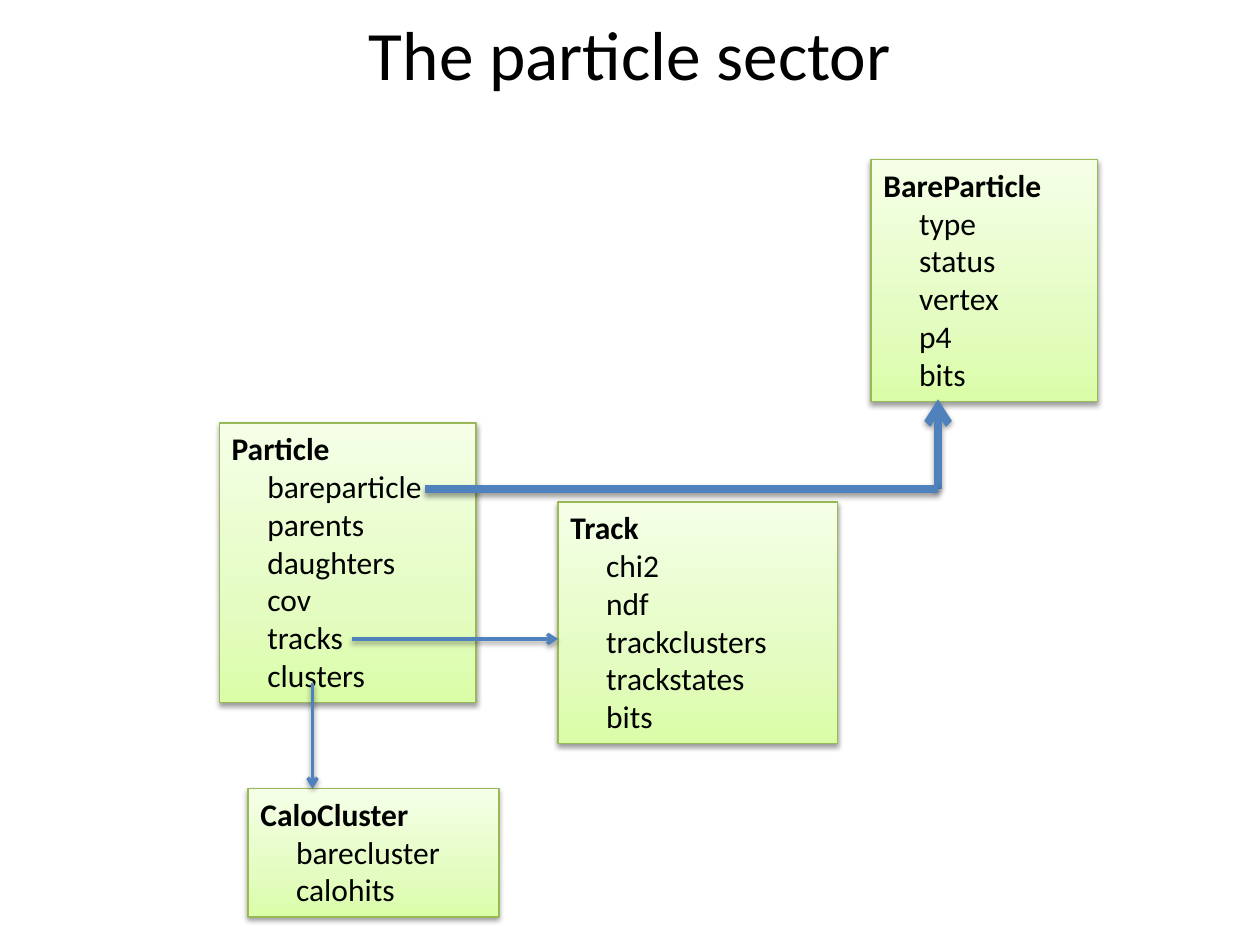
from lxml.etree import SubElement
from pptx import Presentation
from pptx.dml.color import RGBColor
from pptx.enum.shapes import MSO_CONNECTOR, MSO_SHAPE
from pptx.enum.text import MSO_ANCHOR, MSO_AUTO_SIZE, PP_ALIGN
from pptx.oxml.ns import qn
from pptx.util import Cm, Pt

TITLE = "The particle sector"
CLASSES = [
    ("Track", ["chi2", "ndf", "trackclusters", "trackstates", "bits"], (11.25, 10.12, 5.64)),
    ("CaloCluster", ["barecluster", "calohits"], (5, 15.9, 5.06)),
    ("Particle", ["bareparticle", "parents", "daughters", "cov", "tracks", "clusters"],
     (4.42, 8.53, 5.18)),
    ("BareParticle", ["type", "status", "vertex", "p4", "bits"], (17.56, 3.22, 4.57)),
]
LINKS = [
    ((6.3, 15.9), (6.3, 13.77), 2, True),
    ((11.25, 12.88), (7.09, 12.88), 2, True),
    ((18.91, 8.05), (18.91, 9.86), 4.5, True),
    ((18.91, 9.86), (8.56, 9.86), 4.5, False),
]

FONT = "Calibri"
BLACK = RGBColor(0, 0, 0)
BLUE = RGBColor(0x4F, 0x81, 0xBD)
GREEN = RGBColor(0x98, 0xB9, 0x55)
GRADIENT = [
    (0, RGBColor(0xDA, 0xFD, 0xA7)),
    (35, RGBColor(0xE4, 0xFC, 0xC2)),
    (100, RGBColor(0xF5, 0xFF, 0xE7)),
]
LINE_HEIGHT = 0.762
PADDING = 0.3
INDENT = 0.72


def add_node(parent, tag, **attrs):
    return SubElement(parent, qn(tag), {k: str(v) for k, v in attrs.items()})


def add_shadow(shape):
    effects = add_node(shape.element.spPr, "a:effectLst")
    shadow = add_node(effects, "a:outerShdw", blurRad=Pt(3.1), dist=Pt(1.6),
                      dir=5400000, rotWithShape=0)
    color = add_node(shadow, "a:srgbClr", val=BLACK)
    add_node(color, "a:alpha", val=38000)


def set_gradient(shape):
    shape.fill.gradient()
    shape.fill.gradient_angle = 90
    stops = shape.element.spPr.find(qn("a:gradFill")).find(qn("a:gsLst"))
    for stop in list(stops):
        stops.remove(stop)
    for pos, rgb in GRADIENT:
        stop = add_node(stops, "a:gs", pos=pos * 1000)
        add_node(stop, "a:srgbClr", val=rgb)


def style(p, size, bold=False):
    for r in p.runs:
        r.font.name = FONT
        r.font.size = Pt(size)
        r.font.bold = bold
        r.font.color.rgb = BLACK


def add_title(s):
    tf = s.shapes.add_textbox(Cm(1.27), 0, Cm(22.86), Cm(2.11)).text_frame
    tf.word_wrap = True
    tf.vertical_anchor = MSO_ANCHOR.MIDDLE
    tf.text = TITLE
    p = tf.paragraphs[0]
    p.alignment = PP_ALIGN.CENTER
    style(p, 39.6)


def add_class(s, name, members, place):
    left, top, width = place
    height = LINE_HEIGHT * (len(members) + 1) + PADDING
    sp = s.shapes.add_shape(MSO_SHAPE.RECTANGLE, Cm(left), Cm(top), Cm(width), Cm(height))
    set_gradient(sp)
    sp.line.color.rgb = GREEN
    sp.line.width = Pt(0.75)
    add_shadow(sp)
    tf = sp.text_frame
    tf.word_wrap = True
    tf.auto_size = MSO_AUTO_SIZE.SHAPE_TO_FIT_TEXT
    tf.vertical_anchor = MSO_ANCHOR.TOP
    tf.text = "\n".join([name, *members])
    for i, p in enumerate(tf.paragraphs):
        p.alignment = PP_ALIGN.LEFT
        style(p, 18, bold=i == 0)
        if i:
            p._p.get_or_add_pPr().set("marL", str(Cm(INDENT)))


def add_link(s, start, end, width, arrow):
    points = [Cm(v) for v in (*start, *end)]
    line = s.shapes.add_connector(MSO_CONNECTOR.STRAIGHT, *points)
    line.line.color.rgb = BLUE
    line.line.width = Pt(width)
    if arrow:
        add_node(line.element.spPr.find(qn("a:ln")), "a:headEnd", type="arrow")
    add_shadow(line)


def main():
    prs = Presentation()
    prs.slide_width, prs.slide_height = Cm(25.4), Cm(19.05)
    s = prs.slides.add_slide(prs.slide_layouts[6])
    add_title(s)
    for item in CLASSES:
        add_class(s, *item)
    for link in LINKS:
        add_link(s, *link)
    prs.save("out.pptx")


if __name__ == "__main__":
    main()
